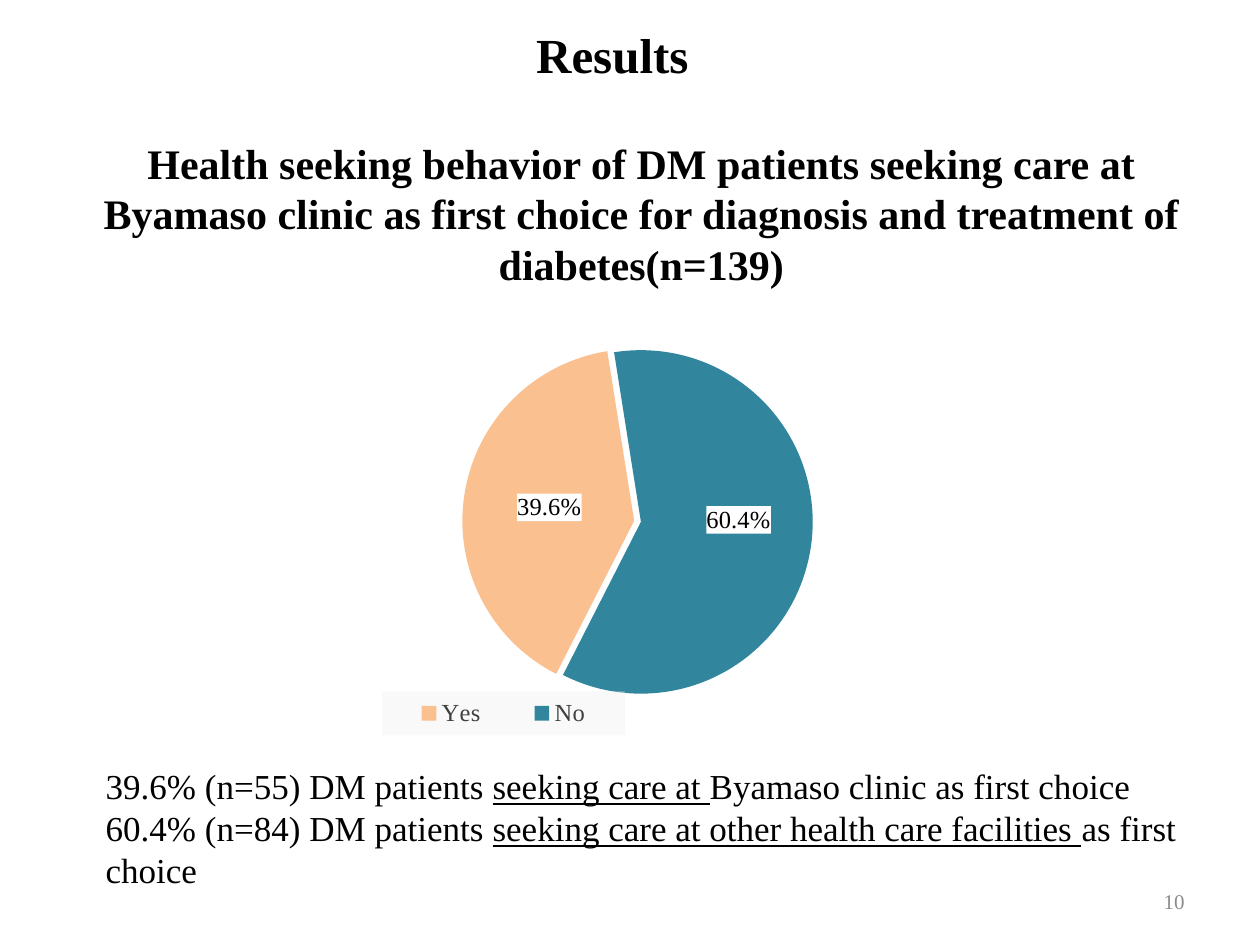
from lxml import etree
from pptx import Presentation
from pptx.chart.data import CategoryChartData
from pptx.dml.color import RGBColor
from pptx.enum import chart as ch, text as tx
from pptx.oxml import parse_xml
from pptx.oxml.ns import nsdecls, qn
from pptx.util import Inches, Pt

FONT = "Times New Roman"
TITLE = ("Health seeking behavior of DM patients seeking care at Byamaso clinic "
         "as first choice for diagnosis and treatment of diabetes(n=139)")
NOTES = [  # (text, underlined)
    [("39.6% (n=55) DM patients ", False), ("seeking care at ", True),
     ("Byamaso clinic as first choice", False)],
    [("60.4% (n=84) DM patients ", False),
     ("seeking care at other health care facilities ", True),
     ("as first choice", False)],
]
SLICES = [  # name, value, colour, label, label shift
    ("Yes ", 40, "FAC090", "39.6%", None),
    ("No", 60, "31859C", "60.4%", (0.02, -0.03)),
]


def style(font, size, color="000000", bold=False):
    font.name, font.size, font.bold = FONT, Pt(size), bold
    font.color.rgb = RGBColor.from_string(color)


def fill_text(shape, box, paras, size, color="000000", bold=False,
              align=tx.PP_ALIGN.LEFT, anchor=tx.MSO_ANCHOR.MIDDLE):
    shape.left, shape.top, shape.width, shape.height = map(Inches, box)
    frame = shape.text_frame
    frame.word_wrap = True
    frame.auto_size = tx.MSO_AUTO_SIZE.NONE
    frame.vertical_anchor = anchor
    for i, runs in enumerate(paras):
        para = frame.add_paragraph() if i else frame.paragraphs[0]
        para.alignment = align
        for words, under in runs:
            run = para.add_run()
            run.text = words
            style(run.font, size, color, bold)
            if under:
                run.font.underline = True


def add_text(slide, box, *args, **opts):
    fill_text(slide.shapes.add_textbox(0, 0, 0, 0), box, *args, **opts)


def layout(after, inner=False, edge=True, **sizes):
    """Put a manual layout right after the given chart element."""
    old = after.getparent().find(qn("c:layout"))
    if old is not None:
        after.getparent().remove(old)
    rows = '<c:layoutTarget val="inner"/>' if inner else ""
    if edge:
        rows += '<c:xMode val="edge"/><c:yMode val="edge"/>'
    rows += "".join(f'<c:{k} val="{v}"/>' for k, v in sizes.items())
    after.addnext(parse_xml(f'<c:layout {nsdecls("c")}><c:manualLayout>{rows}'
                            '</c:manualLayout></c:layout>'))


def backing(color, alpha=100):
    return parse_xml(
        f'<c:spPr {nsdecls("c", "a")}><a:solidFill><a:srgbClr val="{color}">'
        f'<a:alpha val="{alpha * 1000}"/></a:srgbClr></a:solidFill></c:spPr>')


def add_pie(slide):
    data = CategoryChartData()
    data.categories = [s[0] for s in SLICES]
    data.add_series("Series 1", [s[1] for s in SLICES])
    box = map(Inches, (2.5, 1.93, 5.07, 4.09))
    chart = slide.shapes.add_chart(ch.XL_CHART_TYPE.PIE, *box, data).chart
    chart.has_title = False
    style(chart.font, 10)
    plot = chart.plots[0]
    plot.vary_by_categories = True
    series = plot.series[0]

    for i, (_, _, color, words, shift) in enumerate(SLICES):
        point = series.points[i]
        point.format.fill.solid()
        point.format.fill.fore_color.rgb = RGBColor.from_string(color)
        label = point.data_label
        run = label.text_frame.paragraphs[0].add_run()
        run.text = words
        style(run.font, 14)
        label.position = ch.XL_LABEL_POSITION.CENTER
        node = series._element.findall(".//" + qn("c:dLbl"))[i]
        node.find(qn("c:tx")).addnext(backing("FFFFFF"))
        if shift:
            layout(node.find(qn("c:idx")), edge=False, x=shift[0], y=shift[1])

    burst = parse_xml(f'<c:explosion {nsdecls("c")} val="2"/>')
    series._element.find(qn("c:dPt")).addprevious(burst)
    pie = series._element.getparent()
    turn = pie.find(qn("c:firstSliceAng"))
    if turn is None:
        turn = etree.SubElement(pie, qn("c:firstSliceAng"))
    turn.set("val", "207")
    area = pie.getparent()
    mark = etree.Element(qn("c:layout"))
    area.insert(0, mark)
    for old in area.findall(qn("c:layout"))[1:]:
        area.remove(old)
    layout_at = pie.getprevious()
    layout(pie, inner=True, x=0.17, y=0.2, w=0.67, h=0.68)
    area.insert(0, area.findall(qn("c:layout"))[-1])

    chart.has_legend = True
    legend = chart.legend
    legend.position = ch.XL_LEGEND_POSITION.RIGHT
    legend.include_in_layout = False
    style(legend.font, 14, "404040")
    node = legend._element
    layout(node.find(qn("c:legendPos")), x=0.105, y=0.87, w=0.38, h=0.085)
    node.find(qn("c:txPr")).addprevious(backing("F2F2F2", 39))


def main():
    deck = Presentation()
    deck.slide_width, deck.slide_height = Inches(10), Inches(7.5)
    slide = deck.slides.add_slide(deck.slide_layouts[5])
    center = tx.PP_ALIGN.CENTER
    fill_text(slide.shapes.title, (0.48, 1.15, 9.22, 1.08), [[(TITLE, False)]],
              24, bold=True, align=center)
    add_pie(slide)
    add_text(slide, (7.17, 6.95, 2.33, 0.4), [[("10", False)]], 12, "8C8C8C",
             align=tx.PP_ALIGN.RIGHT)
    add_text(slide, (0.74, 6.02, 8.97, 1.11), NOTES, 20,
             anchor=tx.MSO_ANCHOR.TOP)
    add_text(slide, (2.03, 0.03, 5.66, 0.8), [[("Results", False)]], 28,
             bold=True, align=center)
    deck.save("out.pptx")


if __name__ == "__main__":
    main()
